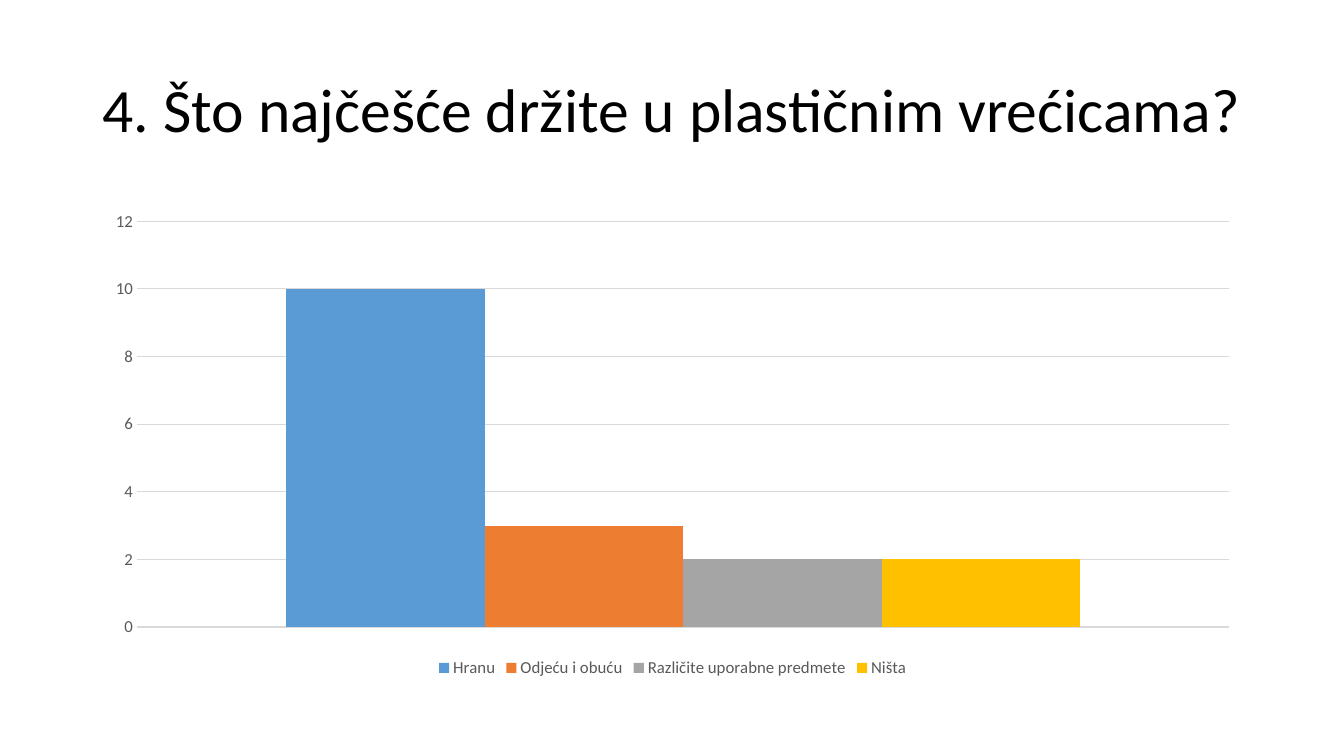
from pptx import Presentation
from pptx import util as u
from pptx.chart.data import CategoryChartData
from pptx.dml.color import RGBColor
from pptx.enum import chart as kinds, text

WIDTH, HEIGHT = u.Inches(13.33), u.Inches(7.5)
FONT = "Calibri"
COLOURS = {"title": "000000", "label": "595959", "grid": "D9D9D9"}
ANSWERS = {
    "Hranu": (10, "5B9BD5"),
    "Odjeću i obuću": (3, "ED7D31"),
    "Različite uporabne predmete": (2, "A5A5A5"),
    "Ništa": (2, "FFC000"),
}


def area(left, top, width, height):
    """Turn shares of the slide's size into a left, top, width, height tuple."""
    return tuple(int(share * size) for share, size in
                 zip((left, top, width, height), (WIDTH, HEIGHT) * 2))


def style_font(font, size, colour):
    """Set the typeface, size and colour of a font."""
    font.name, font.size, font.bold = FONT, u.Pt(size), False
    font.color.rgb = RGBColor.from_string(colour)


def write_title(page, wording, place, size, colour):
    """Place the title placeholder and fill it with formatted text."""
    box = page.shapes.title
    box.left, box.top, box.width, box.height = place
    box.text_frame.word_wrap = True
    box.text_frame.vertical_anchor = text.MSO_ANCHOR.MIDDLE
    para = box.text_frame.paragraphs[0]
    para.alignment, para.line_spacing = text.PP_ALIGN.LEFT, 0.9
    span = para.add_run()
    span.text = wording
    style_font(span.font, size, colour)


def style_axes(chart):
    """Hide the category axis and give the value axis pale gridlines."""
    chart.category_axis.visible = False
    axis = chart.value_axis
    axis.minimum_scale, axis.maximum_scale, axis.major_unit = 0, 12, 2
    axis.major_tick_mark = axis.minor_tick_mark = kinds.XL_TICK_MARK.NONE
    axis.format.line.fill.background()
    style_font(axis.tick_labels.font, 12, COLOURS["label"])
    grid = axis.major_gridlines.format.line
    grid.width = u.Pt(0.75)
    grid.color.rgb = RGBColor.from_string(COLOURS["grid"])


def add_answer_chart(page, answers, place):
    """Add a column chart with one coloured series for each answer."""
    data = CategoryChartData()
    data.categories = ["1"]
    for name, (count, _) in answers.items():
        data.add_series(name, [count])
    chart = page.shapes.add_chart(
        kinds.XL_CHART_TYPE.COLUMN_CLUSTERED, *place, data).chart
    style_font(chart.font, 10, COLOURS["title"])
    chart.has_title = False
    plot = chart.plots[0]
    plot.gap_width, plot.overlap, plot.vary_by_categories = 150, 0, False
    for series, (_, colour) in zip(plot.series, answers.values()):
        series.format.fill.solid()
        series.format.fill.fore_color.rgb = RGBColor.from_string(colour)
    style_axes(chart)
    chart.has_legend = True
    chart.legend.position = kinds.XL_LEGEND_POSITION.BOTTOM
    chart.legend.include_in_layout = False
    style_font(chart.legend.font, 12, COLOURS["label"])


def main():
    """Build the survey slide and save the deck."""
    deck = Presentation()
    deck.slide_width, deck.slide_height = WIDTH, HEIGHT
    page = deck.slides.add_slide(deck.slide_layouts.get_by_name("Title Only"))
    write_title(page, "4. Što najčešće držite u plastičnim vrećicama?",
                area(0.069, 0.053, 0.863, 0.193), 44, COLOURS["title"])
    add_answer_chart(page, ANSWERS, area(0.069, 0.267, 0.863, 0.635))
    deck.save("out.pptx")


if __name__ == "__main__":
    main()
